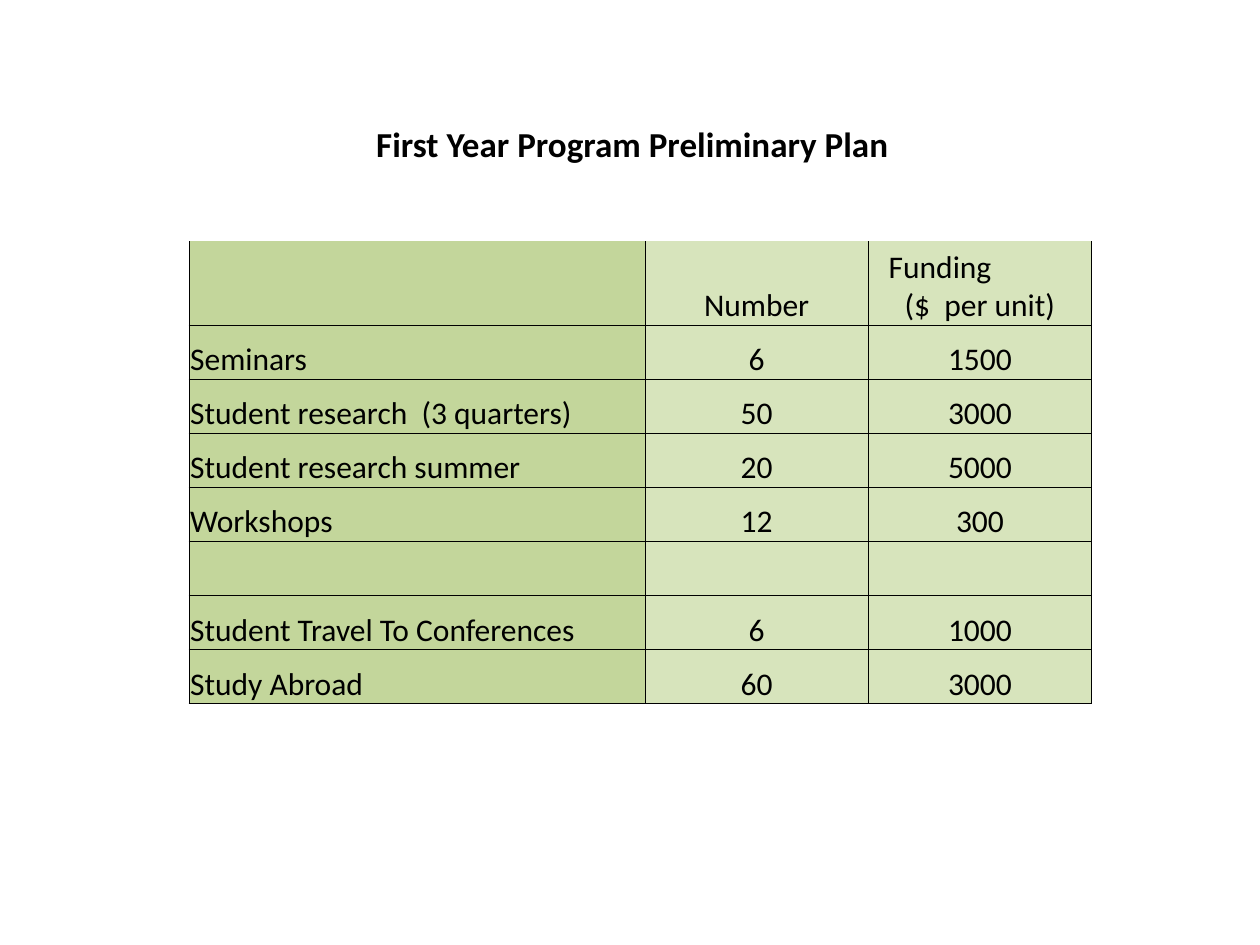
from lxml.etree import SubElement
from pptx import Presentation
from pptx.dml.color import RGBColor
from pptx.enum.text import MSO_ANCHOR as Anchor, PP_ALIGN as Align
from pptx.oxml.ns import qn
from pptx.util import Pt

FONT = "Calibri"
BLACK, GREEN, LIGHT_GREEN = "000000", "C3D69B", "D7E4BC"
COLUMN_WIDTHS = [260.6, 127.6, 127.6]
HEADER_HEIGHT, ROW_HEIGHT = 47.8, 30.9
ROWS = [
    ["", "Number", "Funding\n($  per unit)"],
    ["Seminars", "6", "1500"],
    ["Student research  (3 quarters)", "50", "3000"],
    ["Student research summer", "20", "5000"],
    ["Workshops", "12", "300"],
    ["", "", ""],
    ["Student Travel To Conferences", "6", "1000"],
    ["Study Abroad", "60", "3000"],
]


def color(hex_string):
    return RGBColor.from_string(hex_string)


def format_text(text_frame, size, align, bold=False):
    for paragraph in text_frame.paragraphs:
        paragraph.alignment = align
        paragraph.font.size = Pt(size)
        for run in paragraph.runs:
            run.font.name = FONT
            run.font.size = Pt(size)
            run.font.bold = bold
            run.font.color.rgb = color(BLACK)


def add_title(slide, text):
    box = slide.shapes.add_textbox(Pt(206.6), Pt(66.5), Pt(309.6), Pt(31.5))
    box.text_frame.word_wrap = False
    box.text_frame.text = text
    format_text(box.text_frame, 20, Align.CENTER, bold=True)


def set_borders(cell, sides):
    """Draw thin lines on the named sides, in the order L, R, T, B; hide the rest."""
    properties = cell._tc.get_or_add_tcPr()
    for index, side in enumerate("LRTB"):
        line = properties.makeelement(qn(f"a:ln{side}"), {"w": str(Pt(0.5))})
        properties.insert(index, line)
        if side in sides:
            fill = SubElement(line, qn("a:solidFill"))
            SubElement(fill, qn("a:srgbClr"), val=BLACK)
        else:
            SubElement(line, qn("a:noFill"))


def fill_cell(cell, text, fill, align, sides):
    cell.margin_left = cell.margin_right = cell.margin_top = Pt(0.7)
    cell.margin_bottom = 0
    cell.vertical_anchor = Anchor.BOTTOM
    cell.text_frame.text = text
    format_text(cell.text_frame, 18, align)
    cell.fill.solid()
    cell.fill.fore_color.rgb = color(fill)
    set_borders(cell, sides)


def indent_left(paragraph, indent):
    paragraph.alignment = Align.LEFT
    paragraph._p.get_or_add_pPr().set("marL", str(Pt(indent)))


def add_plan_table(slide):
    heights = [HEADER_HEIGHT] + [ROW_HEIGHT] * (len(ROWS) - 1)
    frame = slide.shapes.add_table(
        len(ROWS), len(COLUMN_WIDTHS), Pt(108), Pt(138),
        Pt(sum(COLUMN_WIDTHS)), Pt(sum(heights)))
    table = frame.table
    table.first_row = table.horz_banding = False
    for column, width in zip(table.columns, COLUMN_WIDTHS):
        column.width = Pt(width)
    for row_index, (texts, height) in enumerate(zip(ROWS, heights)):
        table.rows[row_index].height = Pt(height)
        sides = "LRTB" if row_index else "LRB"
        for column_index, text in enumerate(texts):
            fill, align = ((LIGHT_GREEN, Align.CENTER) if column_index
                           else (GREEN, Align.LEFT))
            fill_cell(table.cell(row_index, column_index), text, fill, align, sides)
    indent_left(table.cell(0, 2).text_frame.paragraphs[0], 11)


def main():
    presentation = Presentation()
    presentation.slide_width, presentation.slide_height = Pt(720), Pt(540)
    slide = presentation.slides.add_slide(presentation.slide_layouts[6])
    add_title(slide, "First Year Program Preliminary Plan")
    add_plan_table(slide)
    presentation.save("out.pptx")


if __name__ == "__main__":
    main()
